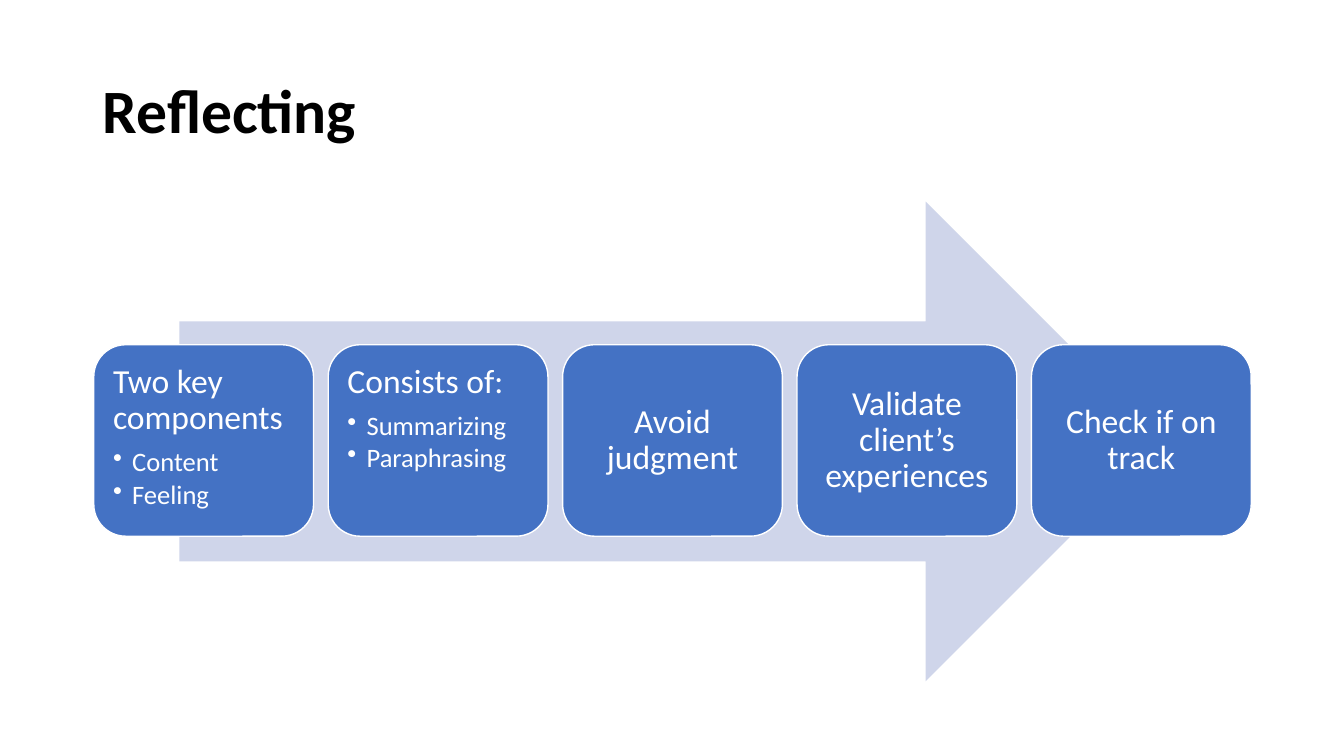
from dataclasses import dataclass

from lxml.etree import SubElement
from pptx import Presentation
from pptx.dml.color import RGBColor
from pptx.enum.shapes import MSO_SHAPE as Shape
from pptx.enum.text import MSO_ANCHOR as Anchor, PP_ALIGN as Align
from pptx.oxml.ns import qn
from pptx.util import Pt

EMU_PER_PX = 9144  # 100 px to the inch


@dataclass(frozen=True)
class Theme:
    font: str = "Calibri"
    ink: str = "000000"
    white: str = "FFFFFF"
    card: str = "4472C4"
    arrow: str = "CFD5EA"
    title_size: int = 44
    card_size: int = 24
    bullet_size: int = 19


THEME = Theme()

# Each step: heading, bullet points
STEPS = [
    ("Two key components", ["Content", "Feeling"]),
    ("Consists of:", ["Summarizing", "Paraphrasing"]),
    ("Avoid judgment", []),
    ("Validate client’s experiences", []),
    ("Check if on track", []),
]
FIRST_LEFT, LAST_LEFT = 93, 1023
CARD_TOP, CARD_WIDTH, CARD_HEIGHT = 342, 218, 190
CARD_INSET = 10
BULLET_INDENT = 19


def px(length):
    return round(length * EMU_PER_PX)


def add_span(para, text, size, color, bold=False):
    para.line_spacing = 0.9
    span = para.add_run()
    span.text = text
    span.font.name = THEME.font
    span.font.size = Pt(size)
    span.font.bold = bold
    span.font.color.rgb = RGBColor.from_string(color)


def add_bullet(para):
    props = para._p.get_or_add_pPr()
    props.set("marL", str(px(BULLET_INDENT)))
    props.set("indent", str(-px(BULLET_INDENT)))
    SubElement(props, qn("a:buChar"), char="•")


def add_filled_shape(page, kind, left, top, width, height, fill):
    shape = page.shapes.add_shape(kind, px(left), px(top), px(width), px(height))
    shape.shadow.inherit = False
    shape.fill.solid()
    shape.fill.fore_color.rgb = RGBColor.from_string(fill)
    shape.line.fill.background()
    return shape


def add_title(page, text):
    box = page.shapes.add_textbox(px(92), px(40), px(1150), px(145))
    frame = box.text_frame
    frame.word_wrap = True
    frame.vertical_anchor = Anchor.MIDDLE
    add_span(frame.paragraphs[0], text, THEME.title_size, THEME.ink, bold=True)


def add_card(page, left, heading, points):
    card = add_filled_shape(page, Shape.ROUNDED_RECTANGLE, left, CARD_TOP,
                            CARD_WIDTH, CARD_HEIGHT, THEME.card)
    card.line.color.rgb = RGBColor.from_string(THEME.white)
    card.line.width = Pt(1)

    frame = card.text_frame
    frame.word_wrap = True
    frame.margin_left = frame.margin_right = px(CARD_INSET)
    frame.margin_top = frame.margin_bottom = px(CARD_INSET)
    frame.vertical_anchor = Anchor.TOP if points else Anchor.MIDDLE

    para = frame.paragraphs[0]
    para.alignment = Align.LEFT if points else Align.CENTER
    if points:
        para.space_after = Pt(0.35 * THEME.card_size)
    add_span(para, heading, THEME.card_size, THEME.white)

    for point in points:
        para = frame.add_paragraph()
        add_bullet(para)
        para.level = 1
        para.alignment = Align.LEFT
        para.space_after = Pt(0.15 * THEME.bullet_size)
        add_span(para, point, THEME.bullet_size, THEME.white)


def main():
    deck = Presentation()
    deck.slide_width, deck.slide_height = px(1333), px(750)
    page = deck.slides.add_slide(deck.slide_layouts[6])

    add_title(page, "Reflecting")

    # Arrow behind the steps
    add_filled_shape(page, Shape.RIGHT_ARROW, 178, 200, 978, 476, THEME.arrow)

    # Evenly spaced step cards
    pitch = (LAST_LEFT - FIRST_LEFT) / (len(STEPS) - 1)
    for index, (heading, points) in enumerate(STEPS):
        add_card(page, FIRST_LEFT + index * pitch, heading, points)

    deck.save("out.pptx")


if __name__ == "__main__":
    main()
